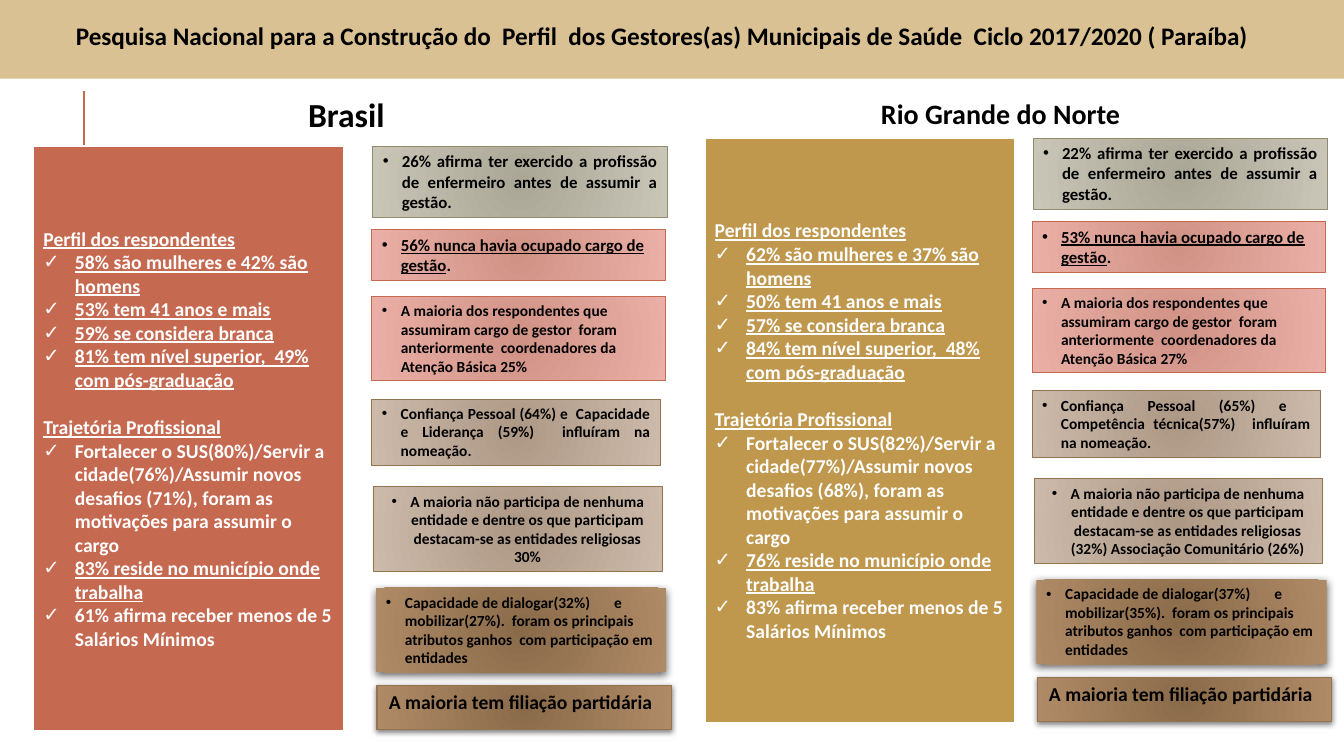
from collections import namedtuple

from lxml import etree
from pptx import Presentation
from pptx.dml.color import RGBColor
from pptx.enum.shapes import MSO_CONNECTOR, MSO_SHAPE
from pptx.enum.text import MSO_ANCHOR, MSO_AUTO_SIZE, PP_ALIGN
from pptx.oxml.ns import qn
from pptx.util import Pt

RECTANGLE = MSO_SHAPE.RECTANGLE
STRAIGHT = MSO_CONNECTOR.STRAIGHT
TOP, MIDDLE = MSO_ANCHOR.TOP, MSO_ANCHOR.MIDDLE
NO_FIT = MSO_AUTO_SIZE.NONE
LEFT, CENTER, JUSTIFY = PP_ALIGN.LEFT, PP_ALIGN.CENTER, PP_ALIGN.JUSTIFY

BLACK = RGBColor(0x00, 0x00, 0x00)
WHITE = RGBColor(0xFF, 0xFF, 0xFF)
SAND = RGBColor(0xD9, 0xC1, 0x94)
BRICK = RGBColor(0xC6, 0x69, 0x51)
OCHRE = RGBColor(0xBF, 0x97, 0x4D)
SAGE_DARK = RGBColor(0xAB, 0xA7, 0x96)
SAGE_LIGHT = RGBColor(0xC9, 0xC5, 0xB7)
SAGE_LINE = RGBColor(0x92, 0x8B, 0x70)
ROSE_DARK = RGBColor(0xD1, 0x92, 0x86)
ROSE_LIGHT = RGBColor(0xEA, 0xAF, 0xA6)
TAUPE_DARK = RGBColor(0xAD, 0x98, 0x85)
TAUPE_LIGHT = RGBColor(0xCC, 0xBA, 0xAB)
BROWN_DARK = RGBColor(0x8A, 0x6B, 0x49)
BROWN_LIGHT = RGBColor(0xAF, 0x8A, 0x67)
BROWN_LINE = RGBColor(0x94, 0x73, 0x4E)

FONT = "Calibri"
PANEL_INDENT, CARD_INDENT = 22.5, 13.5
TAB_STOP = 163

Box = namedtuple("Box", "left top width height")
# shadow: opacity in percent, blur and distance in points
Look = namedtuple("Look", "dark light line shadow")
Card = namedtuple("Card", "box look size align bullet")
Region = namedtuple("Region", "name heading size panel color stack profile career findings")

SAGE = Look(SAGE_DARK, SAGE_LIGHT, SAGE_LINE, None)
ROSE = Look(ROSE_DARK, ROSE_LIGHT, BRICK, None)
TAUPE = Look(TAUPE_DARK, TAUPE_LIGHT, BROWN_LINE, None)
BROWN_SOFT = Look(BROWN_DARK, BROWN_LIGHT, None, (60, 6, 2))
BROWN = Look(BROWN_DARK, BROWN_LIGHT, BROWN_LINE, (50, 4, 1))

# Boxes are relative to the top left corner of the stack of cards.
CARDS = [
    Card(Box(0.7, 0, 210.2, 51.1), SAGE, 12, JUSTIFY, True),
    Card(Box(0, 59.8, 209.5, 36), ROSE, 12, LEFT, True),
    Card(Box(0, 107.3, 209.5, 60.5), ROSE, 11, LEFT, True),
    Card(Box(0, 180.7, 205.9, 47.5), TAUPE, 11, JUSTIFY, True),
    Card(Box(1.4, 243.4, 205.9, 60.5), TAUPE, 11, CENTER, True),
    Card(Box(2.9, 315.4, 207.4, 60.5), BROWN_SOFT, 11, LEFT, True),
    Card(Box(3.6, 385.2, 210.2, 31.7), BROWN, 14, CENTER, False),
]


def findings(nurse, first_post, coordinator, trust, entities, talk, mobilise):
    """Texts of the cards, each a list of (text, underlined) spans."""
    return [
        [(f"{nurse} afirma ter exercido a profissão de enfermeiro antes de assumir a gestão.", False)],
        [(f"{first_post} nunca havia ocupado cargo de gestão", True), (".", False)],
        [("A maioria dos respondentes que assumiram cargo de gestor  foram "
          f"anteriormente  coordenadores da Atenção Básica {coordinator}", False)],
        [(f"Confiança Pessoal {trust}  influíram na nomeação.", False)],
        [("A maioria não participa de nenhuma entidade e dentre os que participam "
          f"destacam-se as entidades religiosas {entities}", False)],
        [(f"Capacidade de dialogar({talk})\te mobilizar({mobilise}).  foram os principais "
          "atributos ganhos  com participação em entidades", False)],
        [("A maioria tem filiação partidária", False)],
    ]


def profile(women, men, mature, white, degree, graduate):
    return [
        (f"{women} são mulheres e {men} são homens", True),
        (f"{mature} tem 41 anos e mais", True),
        (f"{white} se considera branca", True),
        (f"{degree} tem nível superior,  {graduate} com pós-graduação", True),
    ]


def career(system, city, challenge, resident, salary):
    return [
        (f"Fortalecer o SUS({system})/Servir a cidade({city})/Assumir novos desafios "
         f"({challenge}), foram as motivações para assumir o cargo", False),
        (f"{resident} reside no município onde trabalha", True),
        (f"{salary} afirma receber menos de 5 Salários Mínimos", False),
    ]


REGIONS = [
    Region("Brasil", Box(127.4, 63.4, 245.5, 36), 24,
           Box(23.8, 104.4, 221.8, 417.6), BRICK, (265.7, 104.4),
           profile("58%", "42%", "53%", "59%", "81%", "49%"),
           career("80%", "76%", "71%", "83%", "61%"),
           findings("26%", "56%", "25%", "(64%) e  Capacidade e Liderança (59%)",
                    "30%", "32%", "27%")),
    Region("Rio Grande do Norte", Box(594.7, 64.8, 245.5, 31.7), 20,
           Box(503.3, 98.6, 221.8, 417.6), OCHRE, (737.3, 98.6),
           profile("62%", "37%", "50%", "57%", "84%", "48%"),
           career("82%", "77%", "68%", "76%", "83%"),
           findings("22%", "53%", "27%", "(65%) e  Competência técnica(57%)",
                    "(32%) Associação Comunitário (26%)", "37%", "35%")),
]


def place(shape, box):
    shape.left, shape.top, shape.width, shape.height = map(Pt, box)


def prepare_frame(shape, anchor, right_margin=7.2):
    frame = shape.text_frame
    frame.word_wrap = True
    frame.auto_size = NO_FIT
    frame.vertical_anchor = anchor
    frame.margin_left, frame.margin_right = Pt(7.2), Pt(right_margin)
    frame.margin_top = frame.margin_bottom = Pt(3.6)
    return frame


def format_para(para, size, color, align=LEFT, bullet=None, indent=0, before=0):
    para.alignment = align
    para.space_before, para.space_after = Pt(before), Pt(0)
    para.line_spacing = 1.0
    for span in para.runs:
        font = span.font
        font.name, font.size, font.bold = FONT, Pt(size), True
        font.color.rgb = color
    props = para._p.get_or_add_pPr()
    props.set("marL", str(Pt(indent)))
    props.set("indent", str(-Pt(indent)))
    if bullet:
        etree.SubElement(props, qn("a:buFont"), typeface="Arial")
        etree.SubElement(props, qn("a:buChar"), char=bullet)
    else:
        etree.SubElement(props, qn("a:buNone"))
    if "\t" in para.text:
        tabs = etree.SubElement(props, qn("a:tabLst"))
        etree.SubElement(tabs, qn("a:tab"), pos=str(Pt(TAB_STOP)), algn="l")


def write_heading(holder, box, text, size, right_margin):
    place(holder, box)
    frame = prepare_frame(holder, MIDDLE, right_margin)
    frame.text = text
    format_para(frame.paragraphs[0], size, BLACK, CENTER)


def write_panel(holder, region):
    place(holder, region.panel)
    holder.fill.solid()
    holder.fill.fore_color.rgb = region.color
    holder.line.color.rgb = WHITE
    holder.line.width = Pt(1.5)
    frame = prepare_frame(holder, MIDDLE)
    sections = [("Perfil dos respondentes", region.profile, 0),
                ("Trajetória Profissional", region.career, 17)]
    lines = []
    for heading, items, before in sections:
        lines.append((heading, True, None, 0, before))
        lines += [(text, underlined, "✓", PANEL_INDENT, 0) for text, underlined in items]
    for number, (text, underlined, bullet, indent, before) in enumerate(lines):
        para = frame.add_paragraph() if number else frame.paragraphs[0]
        para.text = text
        format_para(para, 14, WHITE, LEFT, bullet, indent, before)
        para.runs[0].font.underline = underlined


def apply_look(shape, look):
    shape.fill.gradient()
    for stop, color in zip(shape.fill.gradient_stops, (look.dark, look.light)):
        stop.color.rgb = color
    props = shape._element.spPr
    gradient = props.find(qn("a:gradFill"))
    gradient.remove(gradient.find(qn("a:lin")))
    radial = etree.SubElement(gradient, qn("a:path"), path="circle")
    etree.SubElement(radial, qn("a:fillToRect"), dict.fromkeys("ltrb", "100000"))
    if look.line is None:
        shape.line.fill.background()
    else:
        shape.line.color.rgb = look.line
        shape.line.width = Pt(0.75)
    shape.shadow.inherit = False
    if look.shadow:
        opacity, blur, distance = look.shadow
        shadow = etree.SubElement(props.find(qn("a:effectLst")), qn("a:outerShdw"),
                                  blurRad=str(Pt(blur)), dist=str(Pt(distance)), dir="5400000")
        color = etree.SubElement(shadow, qn("a:srgbClr"), val=str(BLACK))
        etree.SubElement(color, qn("a:alpha"), val=str(opacity * 1000))


def add_card(page, card, left, top, spans):
    box = card.box._replace(left=left + card.box.left, top=top + card.box.top)
    shape = page.shapes.add_shape(RECTANGLE, *map(Pt, box))
    apply_look(shape, card.look)
    para = prepare_frame(shape, TOP, 7.2 if card.bullet else 12).paragraphs[0]
    para.text = spans[0][0]
    for text, _ in spans[1:]:
        para.add_run().text = text
    format_para(para, card.size, BLACK, card.align, "•" if card.bullet else None,
                CARD_INDENT if card.bullet else 0)
    for span, (_, underlined) in zip(para.runs, spans):
        span.font.underline = underlined


def add_region(page, region, heading_holder, panel_holder):
    write_heading(heading_holder, region.heading, region.name, region.size, 12.6)
    write_panel(panel_holder, region)
    for card, spans in zip(CARDS, region.findings):
        add_card(page, card, *region.stack, spans)


def add_accent_line(page, x, top, bottom):
    line = page.shapes.add_connector(STRAIGHT, Pt(x), Pt(bottom), Pt(x), Pt(top))
    line.line.color.rgb = BRICK
    line.line.width = Pt(1.5)
    etree.SubElement(line._element.spPr, qn("a:effectLst"))


def main():
    deck = Presentation()
    deck.slide_width, deck.slide_height = Pt(960), Pt(540)
    page = deck.slides.add_slide(deck.slide_layouts.get_by_name("Comparison"))
    title, *holders = page.placeholders
    title.fill.solid()
    title.fill.fore_color.rgb = SAND
    write_heading(title, Box(0, -5, 960, 61.2),
                  "Pesquisa Nacional para a Construção do  Perfil  dos Gestores(as) "
                  "Municipais de Saúde  Ciclo 2017/2020 ( Paraíba)", 18, 21)
    add_accent_line(page, 59.8, 64.8, 103.6)
    for region, heading, panel in zip(REGIONS, holders[::2], holders[1::2]):
        add_region(page, region, heading, panel)
    deck.save("out.pptx")


if __name__ == "__main__":
    main()
